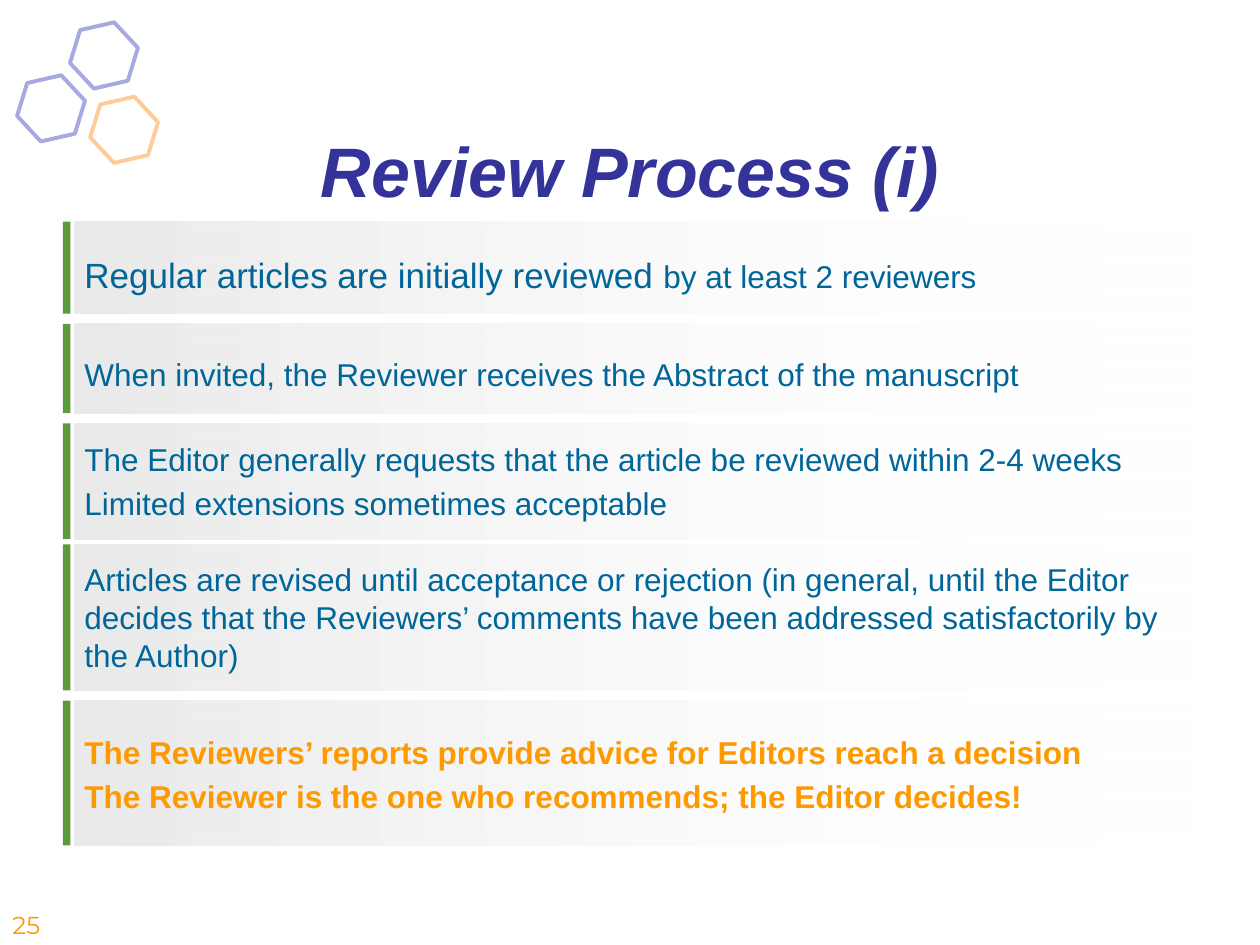
from dataclasses import dataclass

from lxml import etree
from pptx import Presentation
from pptx import util as u
from pptx.dml.color import RGBColor
from pptx.enum import shapes, text
from pptx.oxml.ns import qn


@dataclass(frozen=True)
class Theme:
    navy: str = "333399"
    teal: str = "006699"
    orange: str = "FF9900"
    green: str = "5D9A3C"
    lilac: str = "A8A8E2"
    peach: str = "FFCC99"
    band: str = "EAEAEA"
    white: str = "FFFFFF"
    sans: str = "Arial"
    number: str = "Montserrat"
    title: int = 40
    lead: int = 20
    body: int = 18
    small: int = 14
    outline: float = 2.25


class Deck:
    COLS, ROWS = 100, 75

    def __init__(self, theme):
        self.theme = theme
        self.prs = Presentation()
        self.prs.slide_width, self.prs.slide_height = u.Inches(10), u.Inches(7.5)
        self.s = self.prs.slides.add_slide(self.prs.slide_layouts[6])

    def place(self, col, row, cols, rows):
        w, h = self.prs.slide_width / self.COLS, self.prs.slide_height / self.ROWS
        return [round(v) for v in (col * w, row * h, cols * w, rows * h)]

    def shape(self, kind, *at):
        sp = self.s.shapes.add_shape(kind, *self.place(*at))
        sp.shadow.inherit = False
        return sp

    def hexagon(self, col, row, color):
        sp = self.shape(shapes.MSO_SHAPE.HEXAGON, col, row, 5.5, 4.8)
        sp.adjustments[0], sp.adjustments[1] = 0.288, 1.155
        sp.rotation = 107.1
        sp.fill.background()
        sp.line.color.rgb = RGBColor.from_string(color)
        sp.line.width = u.Pt(self.theme.outline)

    def bar(self, *at):
        sp = self.shape(shapes.MSO_SHAPE.RECTANGLE, *at)
        sp.fill.solid()
        sp.fill.fore_color.rgb = RGBColor.from_string(self.theme.green)
        sp.line.fill.background()

    def fading_band(self, *at):
        sp = self.shape(shapes.MSO_SHAPE.RECTANGLE, *at)
        sp.fill.gradient()
        sp.fill.gradient_angle = 0
        for stop, color in zip(sp.fill.gradient_stops, (self.theme.band, self.theme.white)):
            stop.color.rgb = RGBColor.from_string(color)
        end = sp.fill._fill._gradFill.findall(".//" + qn("a:srgbClr"))[-1]
        etree.SubElement(end, qn("a:alpha"), val="0")
        sp.line.fill.background()

    def text(self, at, paragraphs, color, font=None, bold=False, italic=False,
             align=text.PP_ALIGN.LEFT, anchor=text.MSO_ANCHOR.MIDDLE, inset=(0, 0)):
        tf = self.s.shapes.add_textbox(*self.place(*at)).text_frame
        tf.word_wrap = True
        tf.vertical_anchor = anchor
        tf.margin_left = tf.margin_right = u.Inches(inset[0])
        tf.margin_top = tf.margin_bottom = u.Inches(inset[1])
        for i, runs in enumerate(paragraphs):
            p = tf.add_paragraph() if i else tf.paragraphs[0]
            p.alignment = align
            if i:
                p.space_before = u.Pt(0.2 * self.theme.body)
            for words, size in runs:
                r = p.add_run()
                r.text = words
                r.font.name = font or self.theme.sans
                r.font.size = u.Pt(size)
                r.font.bold, r.font.italic = bold, italic
                r.font.color.rgb = RGBColor.from_string(color)

    def step(self, row, rows, text_row, text_rows, paragraphs, color, bold=False, text_cols=85.5):
        self.bar(5, row, 0.6, rows)
        self.fading_band(5.9, row, 89.3, rows)
        self.text((6.7, text_row, text_cols, text_rows), paragraphs, color, bold=bold)


def main():
    t = Theme()
    deck = Deck(t)
    for col, row, color in ((5.5, 2, t.lilac), (1.3, 6.2, t.lilac), (7.1, 7.9, t.peach)):
        deck.hexagon(col, row, color)
    deck.text((5, 9.1, 90, 8.7), [[("Review Process (i)", t.title)]], t.navy, bold=True,
              italic=True, align=text.PP_ALIGN.CENTER, inset=(0.1, 0.05))
    deck.text((0, 71.7, 6.7, 3.3), [[("25", t.small)]], t.orange, font=t.number,
              anchor=text.MSO_ANCHOR.TOP, inset=(0.1, 0.05))

    deck.step(17.6, 7.3, 20.1, 3.4, [[
        ("Regular articles are initially reviewed ", t.lead),
        ("by at least 2 reviewers", t.body)]], t.teal)
    deck.step(25.7, 7.1, 28.2, 3, [[
        ("When invited, the Reviewer receives the Abstract of the manuscript", t.body)]],
        t.teal, text_cols=87.4)
    deck.step(33.6, 9.2, 34.8, 6.7, [
        [("The Editor generally requests that the article be reviewed within 2-4 weeks", t.body)],
        [("Limited extensions sometimes acceptable", t.body)]], t.teal)
    deck.step(43.2, 11.6, 44.4, 9.1, [[
        ("Articles are revised until acceptance or rejection (in general, until the Editor "
         "decides that the Reviewers’ comments have been addressed satisfactorily by "
         "the Author)", t.body)]], t.teal)
    deck.step(55.6, 11.5, 58.1, 6.6, [
        [("The Reviewers’ reports provide advice for Editors reach a decision", t.body)],
        [("The Reviewer is the one who recommends; the Editor decides!", t.body)]],
        t.orange, bold=True, text_cols=91.7)
    deck.prs.save("out.pptx")


if __name__ == "__main__":
    main()
